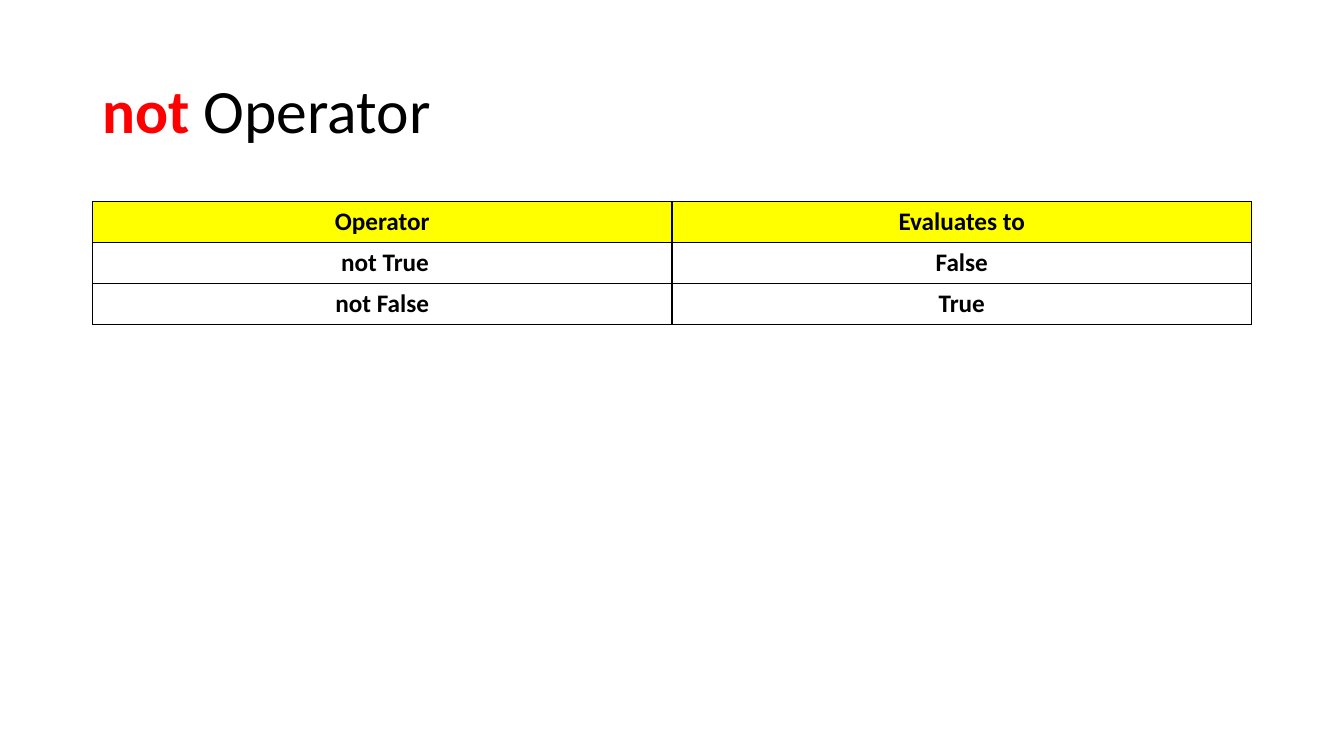
from lxml.etree import SubElement
from pptx import Presentation
from pptx.dml.color import RGBColor
from pptx.enum.text import MSO_ANCHOR, PP_ALIGN
from pptx.oxml.ns import qn
from pptx.util import Cm, Pt


def color(value):
    return RGBColor.from_string(value)


class SlideBuilder:
    font = "Calibri"
    ink = "000000"
    accent = "FF0000"
    header = "FFFF00"

    def __init__(self, s):
        self.s = s

    def style(self, r, size, bold, ink):
        r.font.name = self.font
        r.font.size = Pt(size)
        r.font.bold = bold
        r.font.color.rgb = color(ink)

    def title(self, keyword, rest, left, top, width, height):
        tf = self.s.shapes.add_textbox(Cm(left), Cm(top), Cm(width), Cm(height)).text_frame
        tf.word_wrap = True
        tf.vertical_anchor = MSO_ANCHOR.MIDDLE
        p = tf.paragraphs[0]
        p.line_spacing = 0.9
        for text, bold, ink in ((keyword, True, self.accent), (rest, False, self.ink)):
            r = p.add_run()
            r.text = text
            self.style(r, 44, bold, ink)

    def border(self, cell):
        tc_pr = cell._tc.get_or_add_tcPr()
        for side in ("a:lnL", "a:lnR", "a:lnT", "a:lnB"):
            line = SubElement(tc_pr, qn(side), w=str(Pt(1)))
            fill = SubElement(line, qn("a:solidFill"))
            SubElement(fill, qn("a:srgbClr"), val=self.ink)

    def table(self, rows, left, top, width, row_height):
        table = self.s.shapes.add_table(
            len(rows), len(rows[0]), Cm(left), Cm(top), Cm(width), Cm(row_height * len(rows))
        ).table
        for i, row in enumerate(rows):
            for j, text in enumerate(row):
                cell = table.cell(i, j)
                # Borders come before the fill in the cell properties
                self.border(cell)
                if i == 0:
                    cell.fill.solid()
                    cell.fill.fore_color.rgb = color(self.header)
                else:
                    cell.fill.background()
                cell.text_frame.text = text
                p = cell.text_frame.paragraphs[0]
                p.alignment = PP_ALIGN.CENTER
                self.style(p.runs[0], 18, True, self.ink)


def main():
    prs = Presentation()
    prs.slide_width, prs.slide_height = Cm(33.87), Cm(19.05)
    slide = SlideBuilder(prs.slides.add_slide(prs.slide_layouts[6]))
    left, width = 2.33, 29.21

    # Title
    slide.title("not", " Operator", left, 1.01, width, 3.68)

    # Truth table
    rows = [
        ("Operator", "Evaluates to"),
        (" not True", "False"),
        ("not False", "True"),
    ]
    slide.table(rows, left, 5.08, width, 1.03)

    prs.save("out.pptx")


if __name__ == "__main__":
    main()
